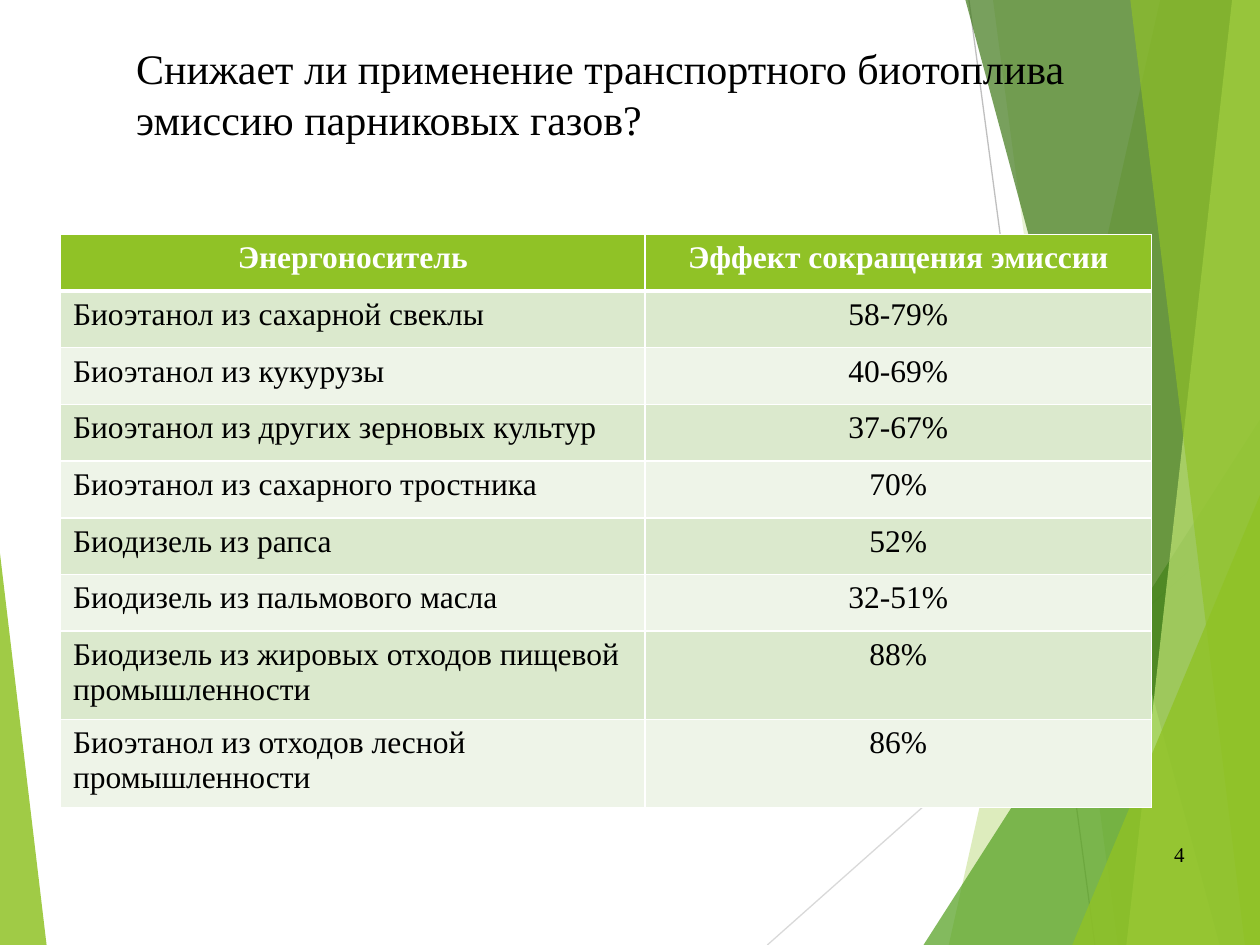
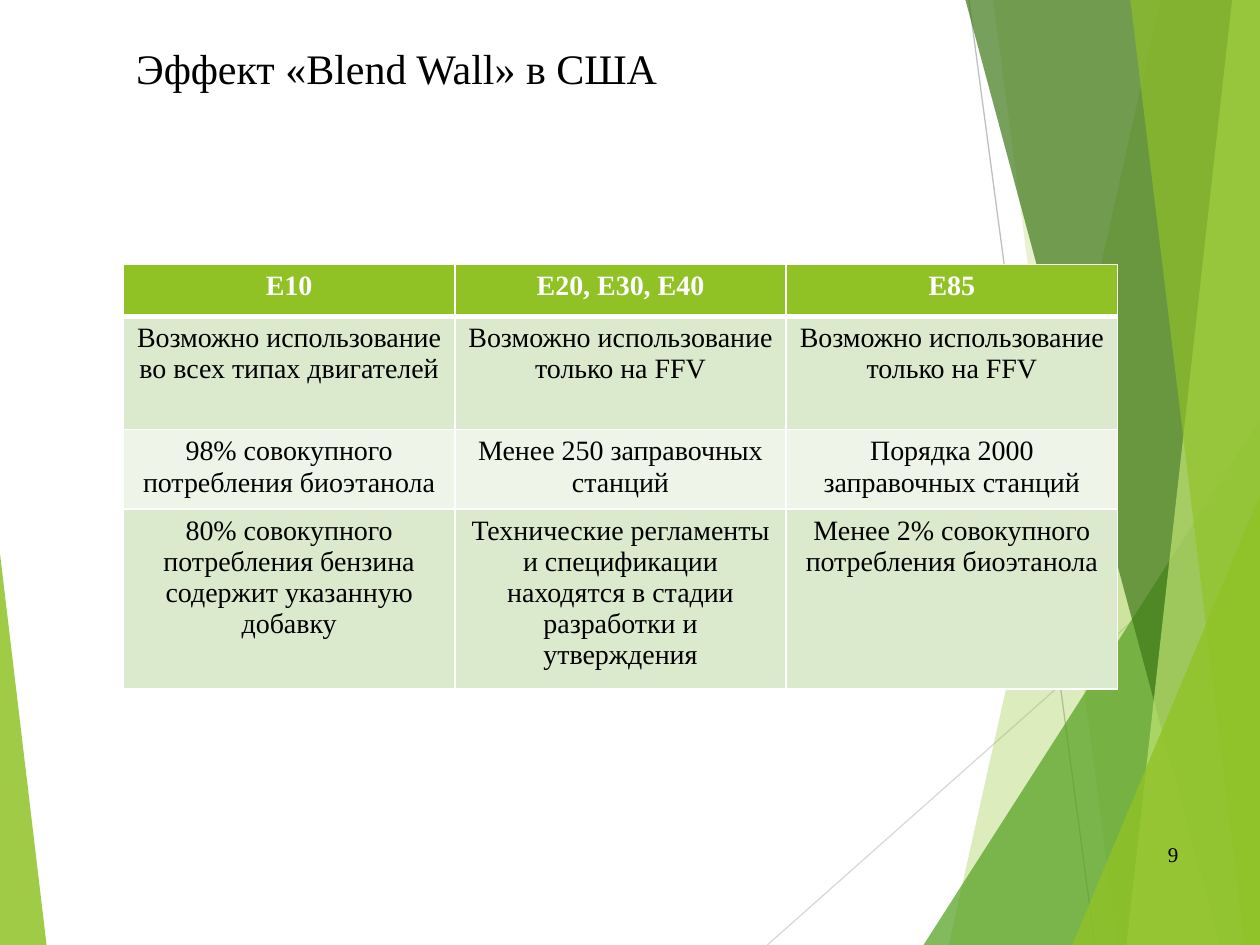
import pptx
import pptx.util
import pptx.dml.color
import pptx.enum.shapes
import pptx.enum.text
import pptx.oxml.ns
import lxml.etree

Inches = pptx.util.Inches
Pt = pptx.util.Pt
RGB = pptx.dml.color.RGBColor
KIND = pptx.enum.shapes.MSO_SHAPE
JOIN = pptx.enum.shapes.MSO_CONNECTOR
ALIGN = pptx.enum.text.PP_ALIGN
ANCHOR = pptx.enum.text.MSO_ANCHOR
FIT = pptx.enum.text.MSO_AUTO_SIZE
qn = pptx.oxml.ns.qn

FONT = "Times New Roman"
BLACK = RGB(0, 0, 0)
WHITE = RGB(255, 255, 255)
LIME = RGB(0x90, 0xC2, 0x26)
GREEN = RGB(0x54, 0xA0, 0x21)
DARK = RGB(0x3F, 0x78, 0x19)
PALE = RGB(0xC0, 0xE4, 0x74)
ODD = RGB(0xDB, 0xE9, 0xCD)
EVEN = RGB(0xEE, 0xF4, 0xE8)
GREY = RGB(0xBF, 0xBF, 0xBF)
LIGHT = RGB(0xD9, 0xD9, 0xD9)

FUELS = [
    ("Энергоноситель", "Эффект сокращения эмиссии"),
    ("Биоэтанол из сахарной свеклы", "58-79%"),
    ("Биоэтанол из кукурузы", "40-69%"),
    ("Биоэтанол из других зерновых культур", "37-67%"),
    ("Биоэтанол из сахарного тростника", "70%"),
    ("Биодизель из рапса", "52%"),
    ("Биодизель из пальмового масла", "32-51%"),
    ("Биодизель из жировых отходов пищевой промышленности", "88%"),
    ("Биоэтанол из отходов лесной промышленности", "86%"),
]
BLENDS = [
    ("E10", "E20, E30, E40", "E85"),
    ("Возможно использование во всех типах двигателей",
     "Возможно использование только на FFV",
     "Возможно использование только на FFV"),
    ("98% совокупного потребления биоэтанола",
     "Менее 250 заправочных станций",
     "Порядка 2000 заправочных станций"),
    ("80% совокупного потребления бензина содержит указанную добавку",
     "Технические регламенты и спецификации находятся в стадии разработки и утверждения",
     "Менее 2% совокупного потребления биоэтанола"),
]


def write(frame, text, size=18, color=BLACK, bold=False, align=ALIGN.LEFT):
    """Put formatted text in a frame."""
    frame.word_wrap = True
    para = frame.paragraphs[0]
    para.alignment = align
    run = para.add_run()
    run.text = text
    font = run.font
    font.name, font.size, font.bold = FONT, Pt(size), bold
    font.color.rgb = color


def paint(shape, color, alpha):
    """Give a shape a see-through fill and no outline."""
    shape.shadow.inherit = False
    shape.line.fill.background()
    shape.fill.solid()
    shape.fill.fore_color.rgb = color
    tone = shape.fill._xPr.find(".//" + qn("a:srgbClr"))
    lxml.etree.SubElement(tone, qn("a:alpha"), val=str(alpha * 1000))


def line(slide, start, end, color):
    """Draw a thin line."""
    rule = slide.shapes.add_connector(
        JOIN.STRAIGHT, *(Inches(v) for v in start + end))
    rule.line.color.rgb = color
    rule.line.width = Pt(0.75)
    lxml.etree.SubElement(rule.element.spPr, qn("a:effectLst"))


def shard(slide, top, base, color, alpha):
    """Draw a full-height band from a slanted edge to the right side."""
    pen = slide.shapes.build_freeform(Inches(top), Inches(-0.01), 1.0)
    points = [(10, -0.01), (10, 7.5), (base, 7.5)]
    pen.add_line_segments([(Inches(x), Inches(y)) for x, y in points])
    paint(pen.convert_to_shape(), color, alpha)


def wedge(slide, left, top, width, tip, color, alpha):
    """Draw a triangle that stands on the lower edge."""
    shape = slide.shapes.add_shape(
        KIND.ISOSCELES_TRIANGLE, Inches(left), Inches(top),
        Inches(width), Inches(7.5 - top))
    shape.adjustments[0] = tip
    paint(shape, color, alpha)


def facets(slide):
    """Draw the shared green backdrop."""
    line(slide, (7.69, 0), (8.69, 7.5), GREY)
    line(slide, (10, 4.03), (6.09, 7.5), LIGHT)
    shard(slide, 9.21, 7.53, LIME, 30)
    shard(slide, 7.88, 8.87, LIME, 20)
    wedge(slide, 7.33, 3.33, 2.67, 1, GREEN, 72)
    shard(slide, 7.66, 9.68, DARK, 70)
    shard(slide, 9.78, 8.94, PALE, 70)
    shard(slide, 8.97, 9.88, LIME, 65)
    wedge(slide, 8.51, 3.93, 1.49, 1, LIME, 80)
    wedge(slide, 0, 4.39, 0.37, 0, LIME, 85)


def head(slide, text, height):
    """Place the title above the backdrop."""
    title = slide.shapes.title
    title.element.getparent().append(title.element)
    title.left, title.top = Inches(0.98), Inches(0.29)
    title.width, title.height = Inches(8.19), Inches(height)
    frame = title.text_frame
    frame.auto_size = FIT.NONE
    frame.vertical_anchor = ANCHOR.TOP
    write(frame, text, size=24)


def number(slide, text, left):
    """Add the page number."""
    box = slide.shapes.add_textbox(
        Inches(left), Inches(6.58), Inches(0.56), Inches(0.4))
    box.text_frame.vertical_anchor = ANCHOR.MIDDLE
    write(box.text_frame, text, size=12, align=ALIGN.RIGHT)


def edge(cell, **widths):
    """Set white cell borders, in points by side."""
    props = cell._tc.get_or_add_tcPr()
    for side in "LRTB":
        width = Pt(widths.get(side, 1))
        rim = lxml.etree.SubElement(props, qn("a:ln" + side), w=str(width))
        fill = lxml.etree.SubElement(rim, qn("a:solidFill"))
        lxml.etree.SubElement(fill, qn("a:srgbClr"), val=str(WHITE))


def grid(slide, data, left, top, cols, rows, size, first):
    """Add a banded table whose first body column has its own alignment."""
    table = slide.shapes.add_table(
        len(rows), len(cols), Inches(left), Inches(top),
        Inches(sum(cols)), Inches(sum(rows))).table
    for col, width in zip(table.columns, cols):
        col.width = Inches(width)
    for r, (row, height) in enumerate(zip(data, rows)):
        table.rows[r].height = Inches(height)
        top_row = r == 0
        for c, text in enumerate(row):
            cell = table.cell(r, c)
            edge(cell, T=3 if r == 1 else 1, B=3 if top_row else 1)
            cell.fill.solid()
            cell.fill.fore_color.rgb = LIME if top_row else (EVEN, ODD)[r % 2]
            write(cell.text_frame, text, size=size, bold=top_row,
                  color=WHITE if top_row else BLACK,
                  align=first if c == 0 and not top_row else ALIGN.CENTER)


def page(deck, title, height, num, left):
    """Start a slide with backdrop, number and title."""
    slide = deck.slides.add_slide(deck.slide_layouts[5])
    facets(slide)
    number(slide, num, left)
    head(slide, title, height)
    return slide


def main():
    """Build and save the deck."""
    deck = pptx.Presentation()
    deck.slide_width, deck.slide_height = Inches(10), Inches(7.5)
    slide = page(
        deck, "Снижает ли применение транспортного биотоплива "
        "эмиссию парниковых газов?", 0.91, "4", 8.94)
    grid(slide, FUELS, 0.48, 1.86, [4.64, 4.02],
         [0.45] * 7 + [0.7] * 2, 18, ALIGN.LEFT)
    slide = page(deck, "Эффект «Blend Wall» в США", 0.5, "9", 8.89)
    grid(slide, BLENDS, 0.98, 2.1, [2.63] * 3,
         [0.41, 0.9, 0.63, 1.43], 16, ALIGN.CENTER)
    deck.save("out.pptx")


if __name__ == "__main__":
    main()
